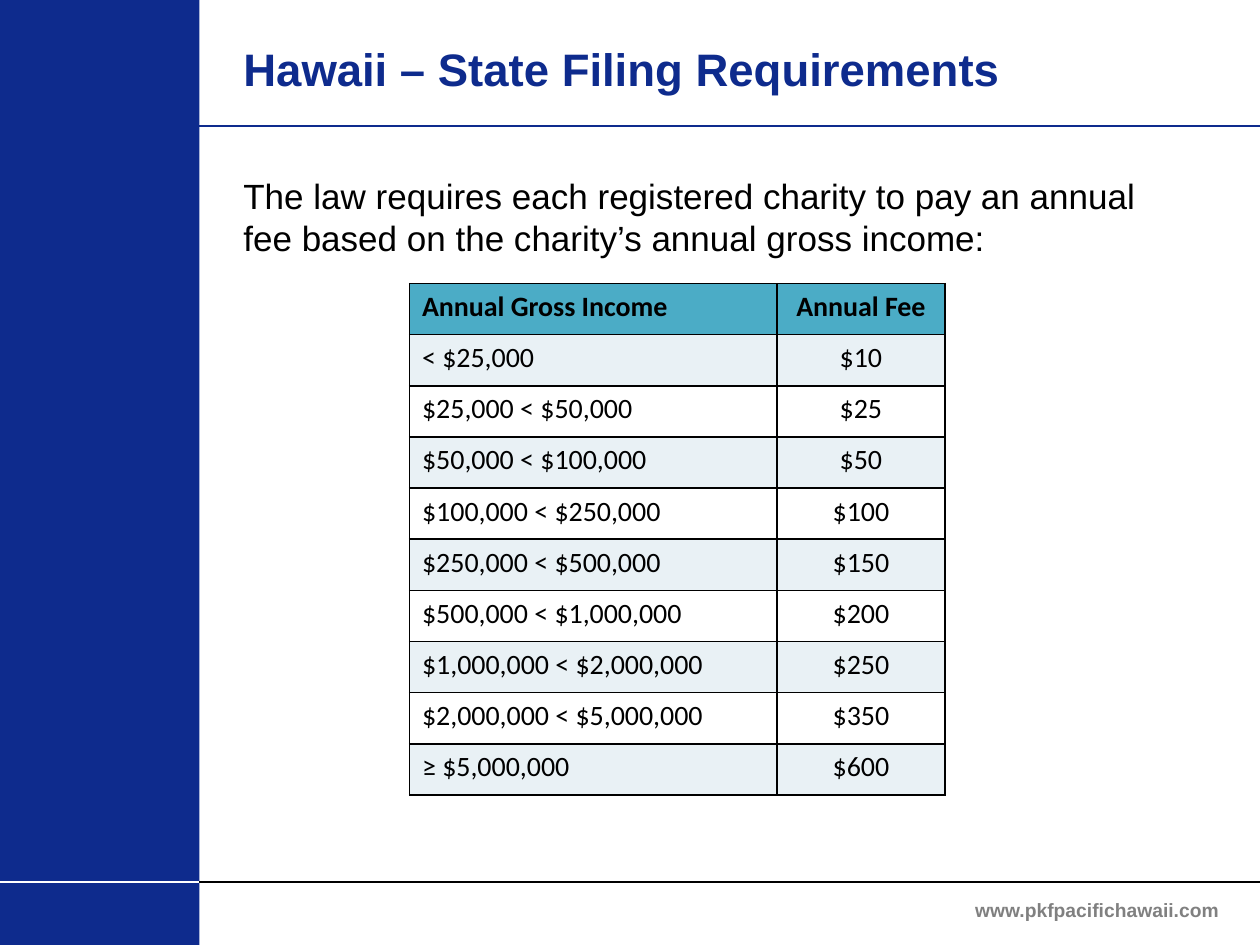
import pptx
import pptx.dml.color
import pptx.enum.shapes
import pptx.enum.text
import pptx.oxml
import pptx.oxml.ns
import pptx.util
from lxml import etree

Pt = pptx.util.Pt
RGBColor = pptx.dml.color.RGBColor
PP_ALIGN = pptx.enum.text.PP_ALIGN
MSO_ANCHOR = pptx.enum.text.MSO_ANCHOR
qn = pptx.oxml.ns.qn

NAVY = RGBColor(0x0E, 0x2B, 0x8D)
BLACK = RGBColor(0, 0, 0)
WHITE = RGBColor(255, 255, 255)
GRAY = RGBColor(0x80, 0x80, 0x80)
TEAL = RGBColor(0x4B, 0xAC, 0xC6)
PALE = RGBColor(0xE9, 0xF1, 0xF5)

SIDEBAR_WIDTH = 114
SLIDE_WIDTH = 720
SLIDE_HEIGHT = 540


def format_paragraph(paragraph, font_name, size, color, bold, alignment):
    paragraph.alignment = alignment
    for run in paragraph.runs:
        run.font.name = font_name
        run.font.size = Pt(size)
        run.font.bold = bold
        run.font.color.rgb = color


def add_border(cell, side):
    line = etree.SubElement(cell._tc.get_or_add_tcPr(), qn(f"a:{side}"), w=str(Pt(1)))
    fill = etree.SubElement(line, qn("a:solidFill"))
    etree.SubElement(fill, qn("a:srgbClr"), val=str(BLACK))


presentation = pptx.Presentation()
presentation.slide_width = Pt(SLIDE_WIDTH)
presentation.slide_height = Pt(SLIDE_HEIGHT)
slide = presentation.slides.add_slide(presentation.slide_layouts[6])

sidebar = slide.shapes.add_shape(
    pptx.enum.shapes.MSO_SHAPE.RECTANGLE, 0, 0, Pt(SIDEBAR_WIDTH), Pt(SLIDE_HEIGHT))
sidebar.shadow.inherit = False
sidebar.fill.solid()
sidebar.fill.fore_color.rgb = NAVY
sidebar.line.fill.background()

rules = [
    (0, SLIDE_WIDTH, 504, BLACK),
    (SIDEBAR_WIDTH, 0, 504, WHITE),
    (SIDEBAR_WIDTH, SLIDE_WIDTH, 72, NAVY),
]
for start, end, top, color in rules:
    rule = slide.shapes.add_connector(
        pptx.enum.shapes.MSO_CONNECTOR.STRAIGHT, Pt(start), Pt(top), Pt(end), Pt(top))
    rule.line.color.rgb = color
    rule.line.width = Pt(1)
    etree.SubElement(rule._element.spPr, qn("a:effectLst"))

texts = [
    ("Hawaii – State Filing Requirements",
     (132, -6, 576, 90), 26, NAVY, True, PP_ALIGN.LEFT, MSO_ANCHOR.MIDDLE),
    ("The law requires each registered charity to pay an annual fee based on "
     "the charity’s annual gross income:",
     (132, 96, 546, 396), 20, BLACK, False, PP_ALIGN.LEFT, MSO_ANCHOR.TOP),
    ("www.pkfpacifichawaii.com",
     (534, 505.5, 186, 29), 11, GRAY, True, PP_ALIGN.CENTER, MSO_ANCHOR.MIDDLE),
]
for text, box, size, color, bold, alignment, anchor in texts:
    shape = slide.shapes.add_textbox(*map(Pt, box))
    text_frame = shape.text_frame
    text_frame.word_wrap = True
    text_frame.vertical_anchor = anchor
    text_frame.text = text
    format_paragraph(text_frame.paragraphs[0], "Arial", size, color, bold, alignment)

fees = [
    ("Annual Gross Income", "Annual Fee"),
    ("< $25,000", "$10"),
    ("$25,000 < $50,000", "$25"),
    ("$50,000 < $100,000", "$50"),
    ("$100,000 < $250,000", "$100"),
    ("$250,000 < $500,000", "$150"),
    ("$500,000 < $1,000,000", "$200"),
    ("$1,000,000 < $2,000,000", "$250"),
    ("$2,000,000 < $5,000,000", "$350"),
    ("≥ $5,000,000", "$600"),
]
column_widths = (210, 96)
row_height = 29.23
table = slide.shapes.add_table(
    len(fees), len(column_widths), Pt(234), Pt(162),
    Pt(sum(column_widths)), Pt(row_height * len(fees))).table
for column, width in zip(table.columns, column_widths):
    column.width = Pt(width)

for row_index, values in enumerate(fees):
    table.rows[row_index].height = Pt(row_height)
    is_header = row_index == 0
    fill_color = TEAL if is_header else (WHITE, PALE)[row_index % 2]
    for column_index, value in enumerate(values):
        cell = table.cell(row_index, column_index)
        cell.text_frame.text = value
        alignment = PP_ALIGN.CENTER if column_index else PP_ALIGN.LEFT
        format_paragraph(
            cell.text_frame.paragraphs[0], "Calibri", 16, BLACK, is_header, alignment)
        for side in ("lnL", "lnR", "lnT", "lnB"):
            add_border(cell, side)
        cell.fill.solid()
        cell.fill.fore_color.rgb = fill_color

presentation.save("out.pptx")
